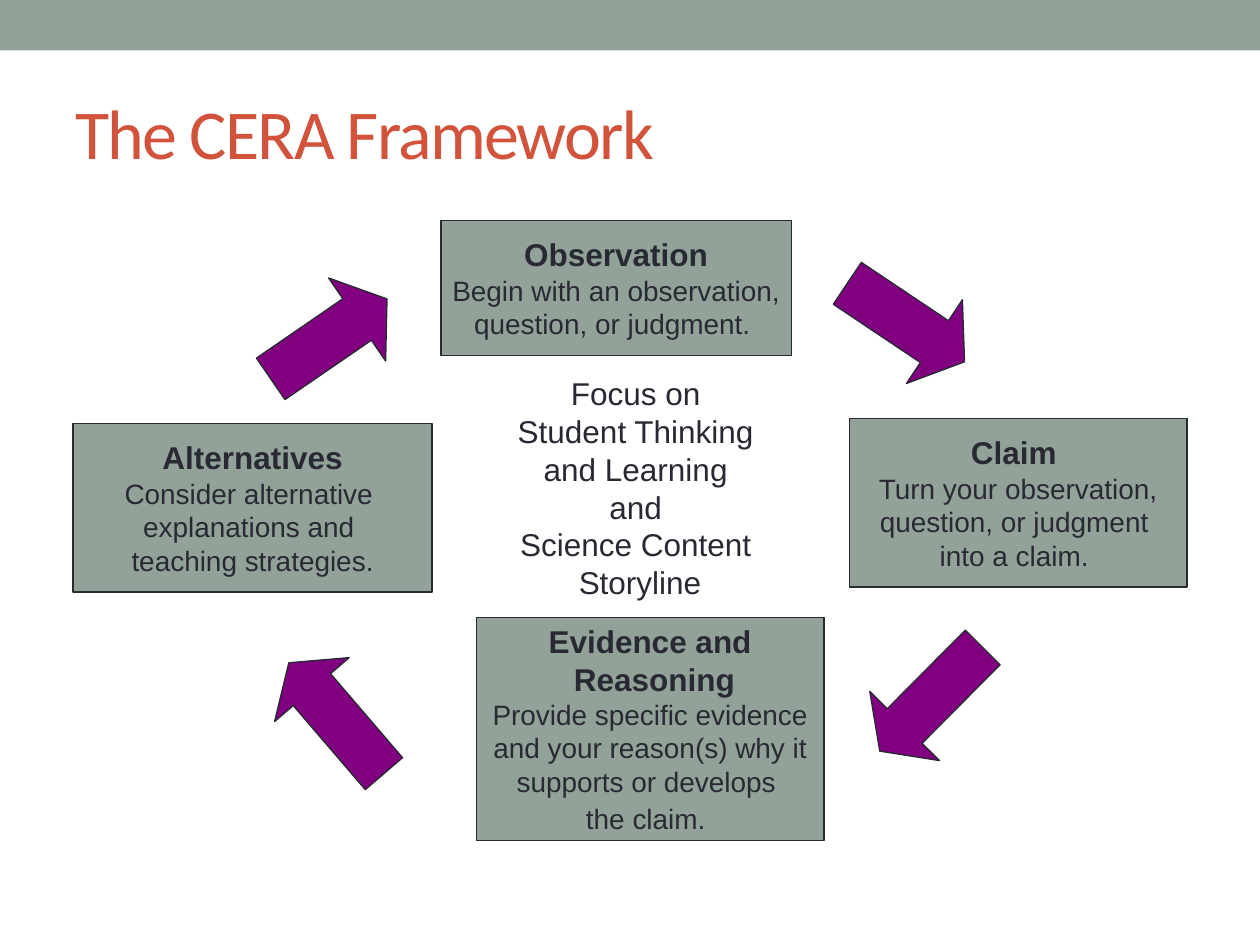
from pptx import Presentation
from pptx.dml.color import RGBColor
from pptx.enum.shapes import MSO_SHAPE
from pptx.enum.text import MSO_ANCHOR, PP_ALIGN
from pptx.util import Pt

RECTANGLE, ARROW = MSO_SHAPE.RECTANGLE, MSO_SHAPE.RIGHT_ARROW
MIDDLE, LEFT, CENTER = MSO_ANCHOR.MIDDLE, PP_ALIGN.LEFT, PP_ALIGN.CENTER
COLORS = {"sage": "93A299", "ink": "292934", "title": "D2533C", "purple": "800080"}


def add_filled(kind, left, top, width, height, fill, outlined=True):
    shape = page.shapes.add_shape(kind, Pt(left), Pt(top), Pt(width), Pt(height))
    shape.shadow.inherit = False
    shape.fill.solid()
    shape.fill.fore_color.rgb = RGBColor.from_string(COLORS[fill])
    if outlined:
        shape.line.color.rgb = RGBColor.from_string(COLORS["ink"])
        shape.line.width = Pt(0.75)
    else:
        shape.line.fill.background()
    return shape


def write(para, text, size=16, bold=False, font="Arial", color="ink", align=CENTER):
    para.alignment = align
    span = para.add_run()
    span.text = text
    span.font.size = Pt(size)
    span.font.bold = bold
    span.font.name = font
    span.font.color.rgb = RGBColor.from_string(COLORS[color])
    return span


deck = Presentation()
deck.slide_width, deck.slide_height = Pt(720), Pt(540)
page = deck.slides.add_slide(deck.slide_layouts[6])

# Top band and title
add_filled(RECTANGLE, 0, 0, 720, 28.8, "sage", outlined=False)
box = page.shapes.add_textbox(Pt(36), Pt(36), Pt(648), Pt(77.76))
box.text_frame.word_wrap = True
box.text_frame.vertical_anchor = MIDDLE
span = write(box.text_frame.paragraphs[0], "The CERA Framework",
             size=40, font="Calibri", color="title", align=LEFT)
span.font._element.set("spc", "-100")

# Four steps of the cycle: position, heading lines, body lines
steps = [
    ((252, 126, 200.16, 77.04), ["Observation"],
     ["Begin with an observation,", "question, or judgment. "]),
    ((41.76, 241.92, 205.2, 96.48), ["Alternatives"],
     ["Consider alternative ", "explanations and ", "teaching strategies."]),
    ((485.28, 239.04, 192.96, 96.48), ["Claim "],
     ["Turn your observation,", "question, or judgment ", "into a claim. "]),
    ((272.16, 352.8, 198.72, 127.44), ["Evidence and", " Reasoning"],
     ["Provide specific evidence", " and your reason(s) why it ",
      "supports or develops ", "the claim."]),
]
for place, headings, body in steps:
    box = add_filled(RECTANGLE, *place, "sage")
    frame = box.text_frame
    frame.word_wrap = False
    frame.vertical_anchor = MIDDLE
    for index, text in enumerate(headings + body):
        para = frame.add_paragraph() if index else frame.paragraphs[0]
        heading = index < len(headings)
        write(para, text, size=18 if heading else 16, bold=heading)
# The last line of the evidence step ends in a larger space
write(para, " ", size=18)

# Focus in the centre
box = page.shapes.add_textbox(Pt(288), Pt(210.24), Pt(155.52), Pt(138.24))
frame = box.text_frame
frame.word_wrap = False
focus = ["Focus on ", "Student Thinking ", "and Learning ", "and ",
         "Science Content ", "Storyline"]
for index, text in enumerate(focus):
    para = frame.add_paragraph() if index else frame.paragraphs[0]
    write(para, text, size=18)

# Arrows between the steps: left, top, width, height, rotation
arrows = [
    (477.36, 155.52, 80.64, 57.6, 33.8),
    (150.48, 382.32, 83.52, 56.16, 229.4),
    (490.32, 371.52, 83.52, 56.16, 134.8),
    (147.6, 164.88, 80.64, 57.6, 325.5),
]
for *place, rotation in arrows:
    arrow = add_filled(ARROW, *place, "purple")
    arrow.adjustments[0] = 0.5
    arrow.adjustments[1] = 0.36
    arrow.rotation = rotation

deck.save("out.pptx")
